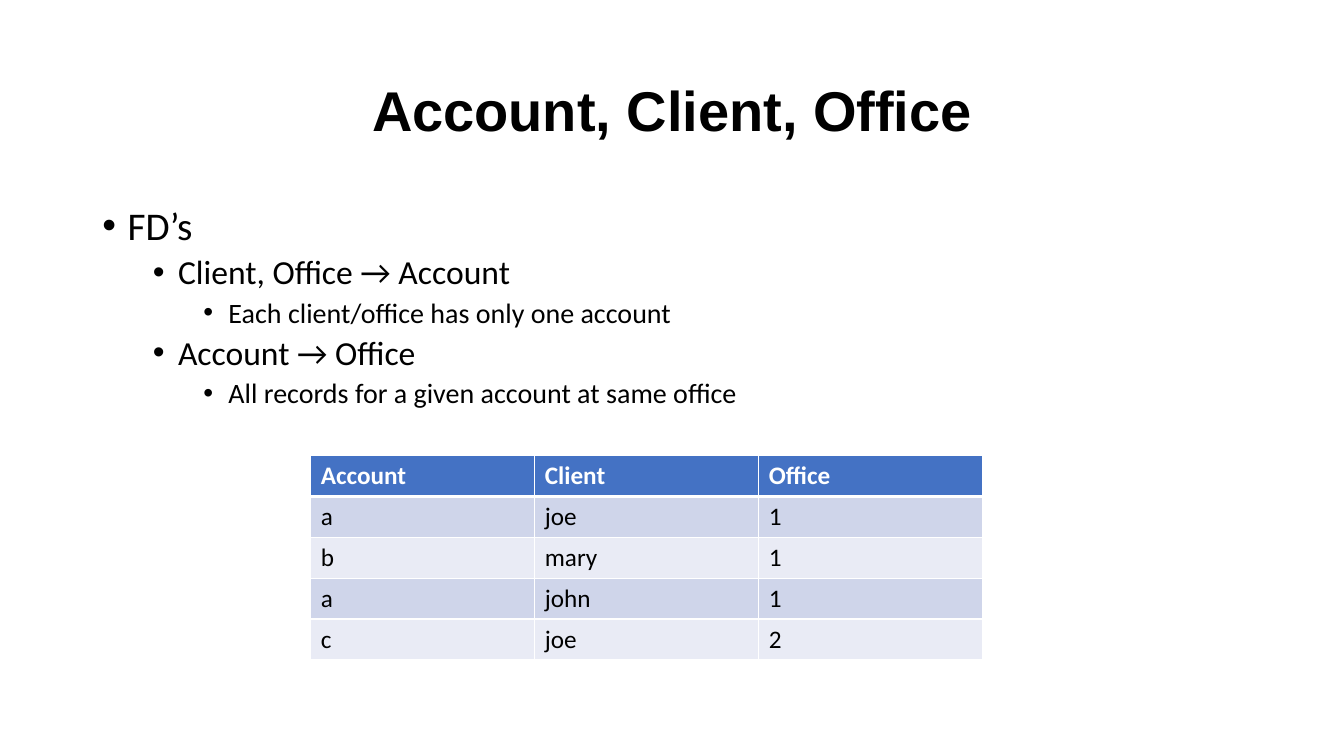
from dataclasses import dataclass

from lxml.etree import SubElement
from pptx import Presentation
from pptx.dml.color import RGBColor as Color
from pptx.enum.text import MSO_ANCHOR as Anchor, MSO_AUTO_SIZE as AutoSize, PP_ALIGN as Align
from pptx.oxml.ns import qn
from pptx.util import Pt


@dataclass(frozen=True)
class Theme:
    heading_font: str = "Arial"
    body_font: str = "Calibri"
    ink: str = "000000"
    white: str = "FFFFFF"
    header: str = "4472C4"
    bands: tuple = ("CFD5EA", "E9EBF5")
    title_size: int = 40
    list_sizes: tuple = (28, 24, 20)
    table_size: int = 18


THEME = Theme()

DEPENDENCIES = [
    (0, "FD’s"),
    (1, "Client, Office → Account"),
    (2, "Each client/office has only one account"),
    (1, "Account → Office"),
    (2, "All records for a given account at same office"),
]
RECORDS = [
    ("Account", "Client", "Office"),
    ("a", "joe", "1"),
    ("b", "mary", "1"),
    ("a", "john", "1"),
    ("c", "joe", "2"),
]


def place(shape, left, top, width, height):
    shape.left, shape.top = Pt(left), Pt(top)
    shape.width, shape.height = Pt(width), Pt(height)


def style(para, font_name, size, color, bold=False):
    for span in para.runs:
        span.font.name = font_name
        span.font.size = Pt(size)
        span.font.bold = bold
        span.font.color.rgb = Color.from_string(color)


def set_bullet(para, level):
    properties = para._p.get_or_add_pPr()
    properties.set("marL", str(Pt(18 + 36 * level)))
    properties.set("indent", str(Pt(-18)))
    SubElement(properties, qn("a:buFont"), typeface=THEME.heading_font)
    SubElement(properties, qn("a:buChar"), char="•")


def add_title(page, text):
    box = page.shapes.title
    place(box, 66, 28.75, 828, 104.4)
    frame = box.text_frame
    frame.text = text
    frame.auto_size = AutoSize.NONE
    frame.vertical_anchor = Anchor.MIDDLE
    para = frame.paragraphs[0]
    para.alignment = Align.CENTER
    para.line_spacing = 0.9
    style(para, THEME.heading_font, THEME.title_size, THEME.ink, bold=True)


def add_list(page, items):
    box = page.placeholders[1]
    place(box, 66, 143.75, 828, 342.6)
    frame = box.text_frame
    frame.text = "\n".join(text for _, text in items)
    frame.auto_size = AutoSize.NONE
    for index, (para, (level, _)) in enumerate(zip(frame.paragraphs, items)):
        para.level = level
        set_bullet(para, level)
        para.line_spacing = 0.9
        para.space_before = Pt(5 if index else 0)
        style(para, THEME.body_font, THEME.list_sizes[level], THEME.ink)


def set_border(cell, side, width):
    line = SubElement(cell._tc.get_or_add_tcPr(), qn(f"a:ln{side}"), w=str(Pt(width)))
    fill = SubElement(line, qn("a:solidFill"))
    SubElement(fill, qn("a:srgbClr"), val=THEME.white)


def format_cell(cell, text, row):
    is_header = row == 0
    # Borders come before the fill in the cell properties
    set_border(cell, "L", 1)
    set_border(cell, "R", 1)
    if is_header:
        set_border(cell, "T", 1)
    set_border(cell, "B", 3 if is_header else 1)
    cell.fill.solid()
    background = THEME.header if is_header else THEME.bands[(row - 1) % 2]
    cell.fill.fore_color.rgb = Color.from_string(background)
    cell.text_frame.text = text
    color = THEME.white if is_header else THEME.ink
    style(cell.text_frame.paragraphs[0], THEME.body_font, THEME.table_size, color, is_header)


def add_records(page, records):
    column_count = len(records[0])
    column_width, row_height = 160, 29.2
    frame = page.shapes.add_table(
        len(records), column_count, Pt(222), Pt(325.4),
        Pt(column_width * column_count), Pt(row_height * len(records)))
    for column in frame.table.columns:
        column.width = Pt(column_width)
    for row, record in enumerate(records):
        frame.table.rows[row].height = Pt(row_height)
        for column, text in enumerate(record):
            format_cell(frame.table.cell(row, column), text, row)


def main():
    deck = Presentation()
    deck.slide_width, deck.slide_height = Pt(960), Pt(540)
    page = deck.slides.add_slide(deck.slide_layouts[1])
    page.background.fill.solid()
    page.background.fill.fore_color.rgb = Color.from_string(THEME.white)

    # Heading and functional dependencies
    add_title(page, "Account, Client, Office")
    add_list(page, DEPENDENCIES)

    # Example records
    add_records(page, RECORDS)
    deck.save("out.pptx")


if __name__ == "__main__":
    main()
